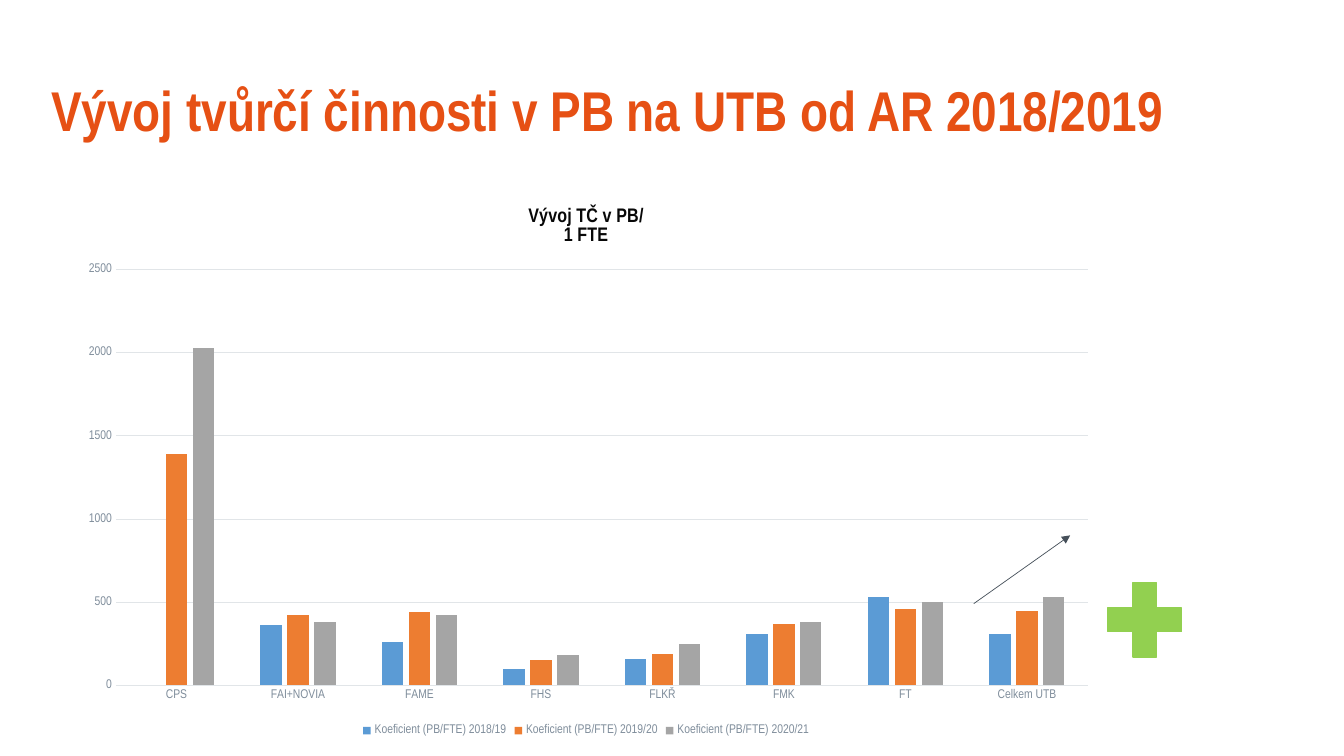
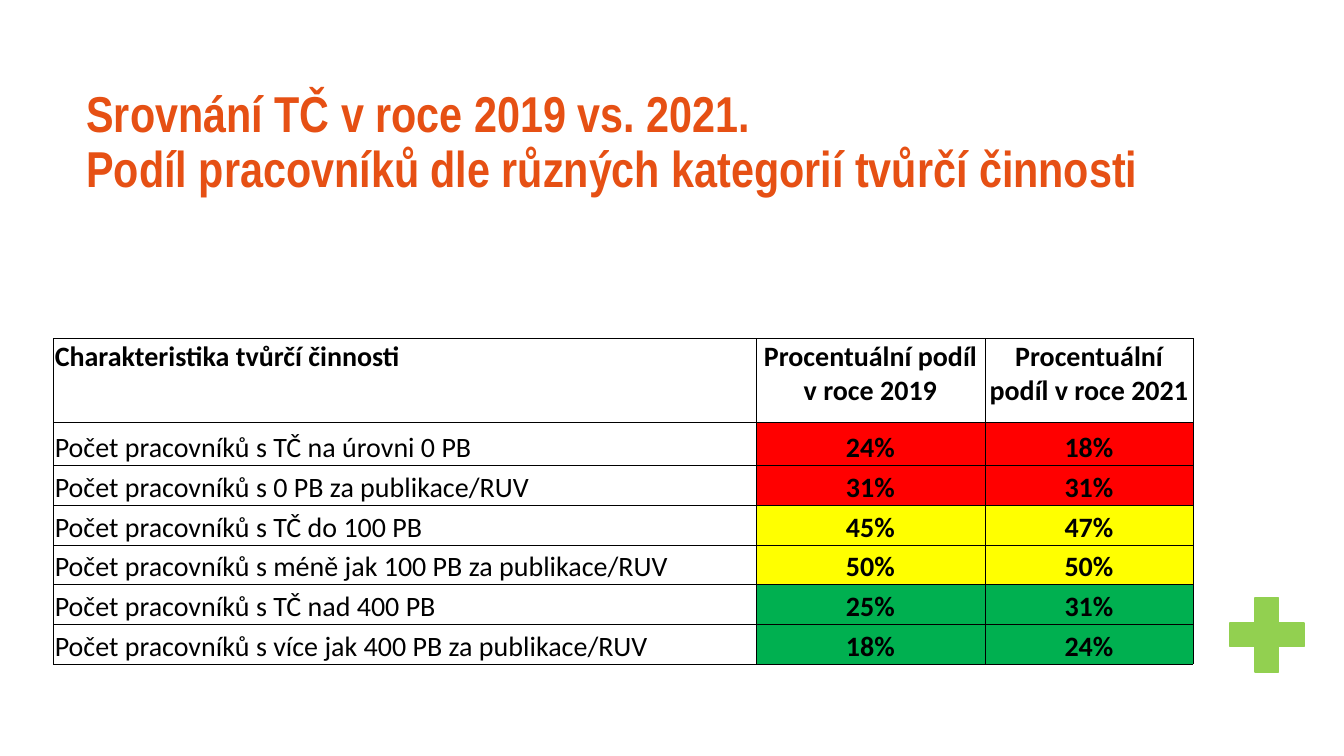
"""Build two slides on creative output: a chart by faculty and a comparison table."""
from lxml.etree import SubElement
from pptx import Presentation
from pptx.chart.data import CategoryChartData
from pptx.dml.color import RGBColor
from pptx.enum.chart import XL_CHART_TYPE, XL_LEGEND_POSITION, XL_TICK_MARK
from pptx.enum.shapes import MSO_CONNECTOR, MSO_SHAPE
from pptx.enum.text import MSO_ANCHOR, PP_ALIGN
from pptx.oxml import parse_xml
from pptx.oxml.ns import nsdecls, qn
from pptx.util import Cm, Pt

COLORS = {
    "title": "E65014", "plus": "92D050", "arrow": "46505A", "axis": "7F8D9B",
    "grid": "E1E5E8", "chart_title": "080808", "black": "000000", "white": "FFFFFF",
    "low": "FF0000", "middle": "FFFF00", "high": "00B050",
    "2018/19": "5B9BD5", "2019/20": "ED7D31", "2020/21": "A5A5A5",
}
HEADING_FONT = "Arial Narrow"
TABLE_FONT = "Calibri"

TREND_TITLE = "Vývoj tvůrčí činnosti v PB na UTB od AR 2018/2019"
CHART_TITLE = "Vývoj TČ v PB/\n1 FTE"
FACULTIES = ["CPS", "FAI+NOVIA", "FAME", "FHS", "FLKŘ", "FMK", "FT", "Celkem UTB"]
COEFFICIENTS = {
    "2018/19": [None, 360, 260, 100, 160, 310, 530, 310],
    "2019/20": [1390, 420, 440, 150, 190, 370, 460, 450],
    "2020/21": [2030, 380, 420, 180, 250, 380, 500, 530],
}
PLOT_AREA = {"x": 0.05, "y": 0.15, "w": 0.93, "h": 0.75}

SHARE_TITLE = "Srovnání TČ v roce 2019 vs. 2021.\vPodíl pracovníků dle různých kategorií tvůrčí činnosti"
SHARE_HEADER = ("Charakteristika tvůrčí činnosti", "Procentuální podíl v roce 2019",
                "Procentuální podíl v roce 2021")
SHARES = [
    ("low", "Počet pracovníků s TČ na úrovni 0 PB", "24%", "18%"),
    ("low", "Počet pracovníků s 0 PB za publikace/RUV", "31%", "31%"),
    ("middle", "Počet pracovníků s TČ do 100 PB", "45%", "47%"),
    ("middle", "Počet pracovníků s méně jak 100 PB za publikace/RUV", "50%", "50%"),
    ("high", "Počet pracovníků s TČ nad 400 PB", "25%", "31%"),
    ("high", "Počet pracovníků s více jak 400 PB za publikace/RUV", "18%", "24%"),
]
COLUMN_WIDTHS = (17.7, 5.77, 5.25)
ROW_HEIGHTS = (2.1, 1.1) + (1,) * 5


def rgb(name):
    return RGBColor.from_string(COLORS[name])


def style_font(font, size, color, name=HEADING_FONT, bold=False):
    font.size, font.name, font.bold = Pt(size), name, bold
    font.color.rgb = rgb(color)


def add_title(slide, text, left, top, size):
    frame = slide.shapes.add_textbox(Cm(left), Cm(top), Cm(28.73), Cm(3.68)).text_frame
    frame.word_wrap = True
    frame.vertical_anchor = MSO_ANCHOR.MIDDLE
    frame.text = text
    paragraph = frame.paragraphs[0]
    paragraph.line_spacing = 0.9
    for run in paragraph.runs:
        style_font(run.font, size, "title", bold=True)


def add_plus(slide, left, top):
    plus = slide.shapes.add_shape(MSO_SHAPE.MATH_PLUS, Cm(left), Cm(top), Cm(2.54), Cm(2.54))
    plus.shadow.inherit = False
    plus.fill.solid()
    plus.fill.fore_color.rgb = plus.line.color.rgb = rgb("plus")
    plus.line.width = Pt(1)


def add_trend_arrow(slide):
    arrow = slide.shapes.add_connector(
        MSO_CONNECTOR.STRAIGHT, Cm(24.54), Cm(15.21), Cm(26.97), Cm(13.49))
    arrow.line.color.rgb = rgb("arrow")
    arrow.line.width = Pt(0.5)
    SubElement(arrow.line._get_or_add_ln(), qn("a:tailEnd"), type="triangle")
    SubElement(arrow.element.spPr, qn("a:effectLst"))


def place_plot(chart):
    plot_area = chart.element.xpath("//c:plotArea")[0]
    for layout in plot_area.findall(qn("c:layout")):
        plot_area.remove(layout)
    sides = "".join(f'<c:{side} val="{share}"/>' for side, share in PLOT_AREA.items())
    plot_area.insert(0, parse_xml(
        f'<c:layout {nsdecls("c")}><c:manualLayout><c:layoutTarget val="inner"/>'
        f'<c:xMode val="edge"/><c:yMode val="edge"/>{sides}</c:manualLayout></c:layout>'))


def add_coefficient_chart(slide):
    data = CategoryChartData()
    data.categories = FACULTIES
    for year, values in COEFFICIENTS.items():
        data.add_series(f"Koeficient (PB/FTE) {year}", values)
    chart = slide.shapes.add_chart(XL_CHART_TYPE.COLUMN_CLUSTERED, Cm(1.6), Cm(4.7),
                                   Cm(26.34), Cm(13.97), data).chart
    style_font(chart.font, 10, "arrow")
    chart.has_title = True
    chart.chart_title.include_in_layout = False
    chart.chart_title.text_frame.text = CHART_TITLE
    for paragraph in chart.chart_title.text_frame.paragraphs:
        for run in paragraph.runs:
            style_font(run.font, 14, "chart_title", bold=True)
    chart.has_legend = True
    chart.legend.position = XL_LEGEND_POSITION.BOTTOM
    chart.legend.include_in_layout = False
    style_font(chart.legend.font, 9, "axis")

    plot = chart.plots[0]
    plot.gap_width, plot.overlap, plot.vary_by_categories = 219, -27, False
    for year, series in zip(COEFFICIENTS, plot.series):
        series.format.fill.solid()
        series.format.fill.fore_color.rgb = rgb(year)

    faculty_axis, value_axis = chart.category_axis, chart.value_axis
    for axis in (faculty_axis, value_axis):
        axis.major_tick_mark = axis.minor_tick_mark = XL_TICK_MARK.NONE
        style_font(axis.tick_labels.font, 9, "axis")
    value_axis.minimum_scale, value_axis.maximum_scale, value_axis.major_unit = 0, 2500, 500
    value_axis.tick_labels.number_format = "0"
    value_axis.tick_labels.number_format_is_linked = False
    value_axis.format.line.fill.background()
    for line in (faculty_axis.format.line, value_axis.major_gridlines.format.line):
        line.color.rgb = rgb("grid")
        line.width = Pt(0.75)
    place_plot(chart)


def add_borders(cell):
    properties = cell._tc.get_or_add_tcPr()
    for side in ("lnL", "lnR", "lnT", "lnB"):
        border = SubElement(properties, qn(f"a:{side}"), w=str(Pt(0.5)))
        fill = SubElement(border, qn("a:solidFill"))
        SubElement(fill, qn("a:srgbClr"), val=COLORS["black"])


def fill_cell(cell, text, fill, is_header, is_label):
    add_borders(cell)
    cell.fill.solid()
    cell.fill.fore_color.rgb = rgb(fill)
    cell.margin_left = cell.margin_right = cell.margin_top = Cm(0.03)
    cell.margin_bottom = Cm(0)
    cell.vertical_anchor = MSO_ANCHOR.TOP if is_header else MSO_ANCHOR.BOTTOM
    cell.text_frame.text = text
    paragraph = cell.text_frame.paragraphs[0]
    paragraph.alignment = PP_ALIGN.LEFT if is_label else PP_ALIGN.CENTER
    style_font(paragraph.runs[0].font, 20, "black", TABLE_FONT, is_header or not is_label)


def add_share_table(slide):
    rows = [("white", *SHARE_HEADER), *SHARES]
    table = slide.shapes.add_table(
        len(rows), len(COLUMN_WIDTHS), Cm(1.35), Cm(8.53),
        Cm(sum(COLUMN_WIDTHS)), Cm(sum(ROW_HEIGHTS))).table
    table.first_row = table.horz_banding = False
    for column, width in zip(table.columns, COLUMN_WIDTHS):
        column.width = Cm(width)
    for row_index, (level, *texts) in enumerate(rows):
        table.rows[row_index].height = Cm(ROW_HEIGHTS[row_index])
        for column_index, text in enumerate(texts):
            is_label = column_index == 0
            fill_cell(table.cell(row_index, column_index), text,
                      "white" if is_label else level, row_index == 0, is_label)


def main():
    deck = Presentation()
    deck.slide_width, deck.slide_height = Cm(33.87), Cm(19.05)
    blank = deck.slide_layouts[6]

    trend = deck.slides.add_slide(blank)
    add_title(trend, TREND_TITLE, 1.04, 1.02, 40)
    add_coefficient_chart(trend)
    add_plus(trend, 27.58, 14.35)
    add_trend_arrow(trend)

    shares = deck.slides.add_slide(blank)
    add_title(shares, SHARE_TITLE, 1.93, 1.78, 36)
    add_share_table(shares)
    add_plus(shares, 30.66, 14.73)

    deck.save("out.pptx")


if __name__ == "__main__":
    main()
